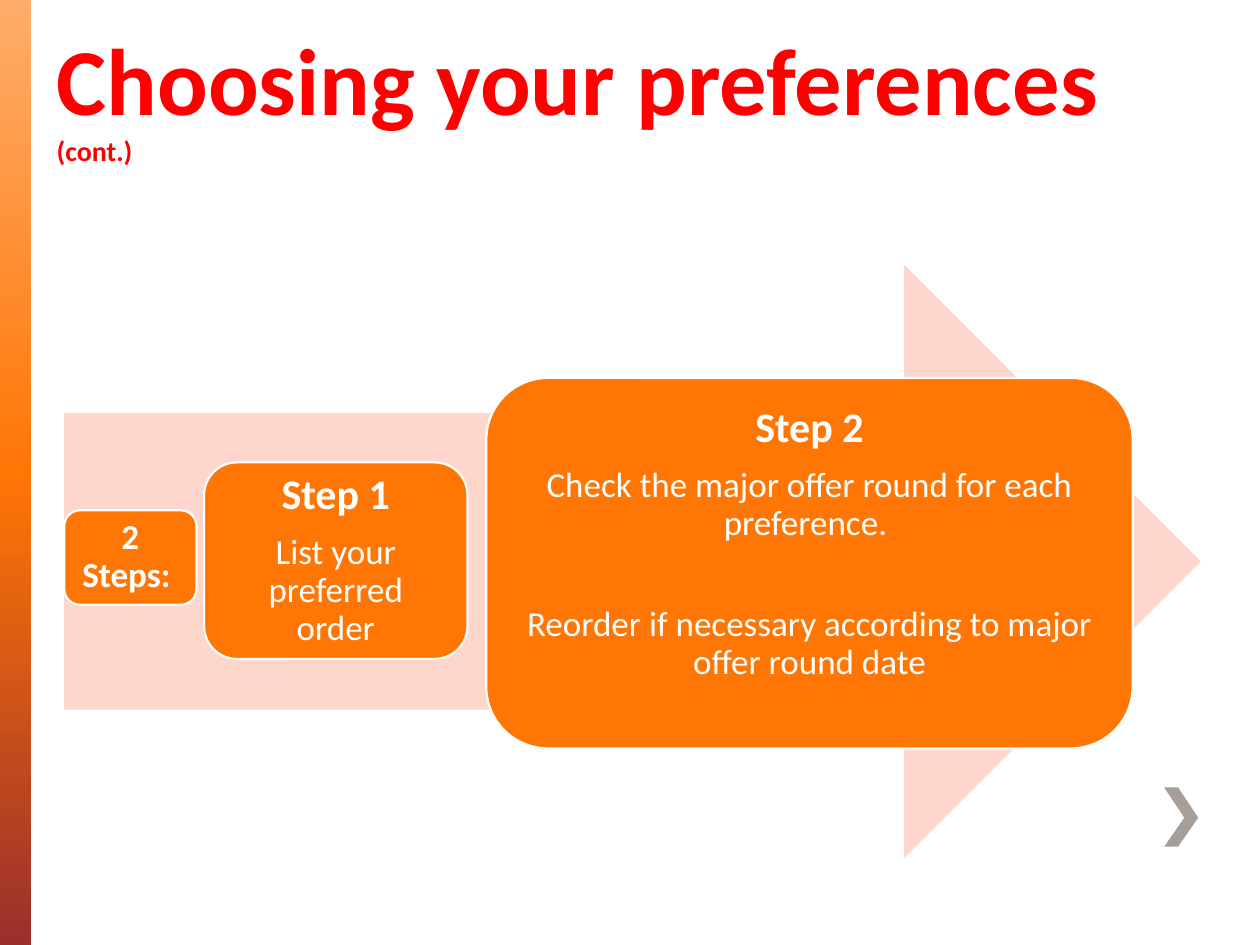
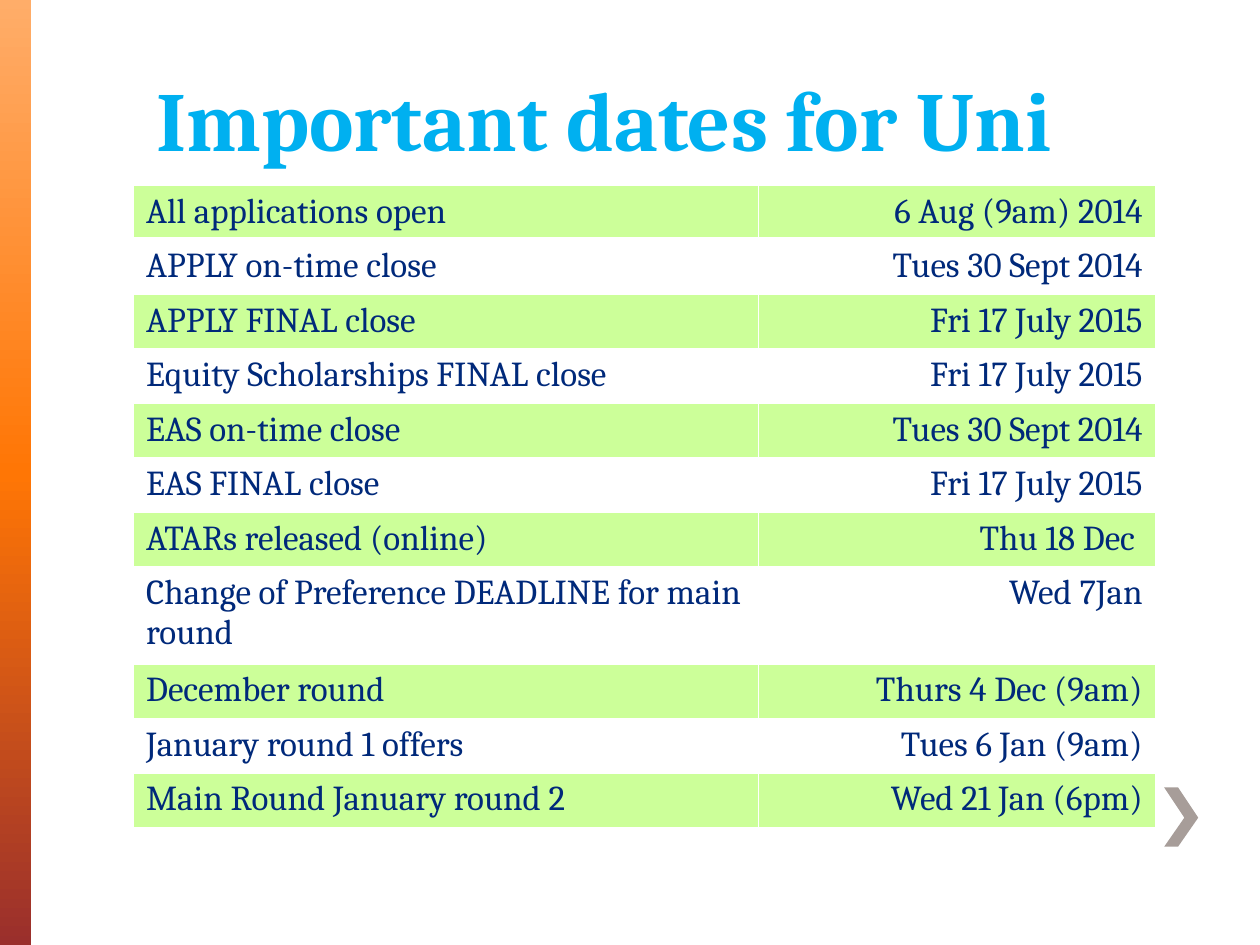
from copy import deepcopy

from lxml.etree import SubElement
from pptx import Presentation
from pptx.dml.color import RGBColor
from pptx.enum.shapes import MSO_SHAPE
from pptx.enum.text import MSO_ANCHOR, MSO_AUTO_SIZE, PP_ALIGN
from pptx.oxml.ns import qn
from pptx.util import Inches, Pt

COLORS = {
    "band_top": "FFAD69",
    "orange": "FF7605",
    "band_bottom": "9A2F2C",
    "chevron": "A79D99",
    "arrow": "FFD6CC",
    "white": "FFFFFF",
    "red": "FF0000",
    "sky": "00B0F0",
    "navy": "00297A",
    "lime": "CCFF99",
}
COLORS = {name: RGBColor.from_string(value) for name, value in COLORS.items()}

presentation = Presentation()
presentation.slide_width = Inches(10)
presentation.slide_height = Inches(7.5)
COLUMN = presentation.slide_width / 100
ROW = presentation.slide_height / 75


def area(left, top, width, height):
    return [round(cells * unit) for cells, unit in
            zip((left, top, width, height), (COLUMN, ROW, COLUMN, ROW))]


def write(paragraph, text, color, **formats):
    run = paragraph.add_run()
    run.text = text
    run.font.color.rgb = COLORS[color]
    for name, value in formats.items():
        setattr(run.font, name, value)


BAND_STOPS = [(0, "band_top"), (0.5, "orange"), (1, "band_bottom")]
CHEVRON_POINTS = [(924, 625), (940, 649), (924, 672), (935, 672), (951, 649)]
TITLE_FORMAT = {
    "word_wrap": True,
    "auto_size": MSO_AUTO_SIZE.NONE,
    "vertical_anchor": MSO_ANCHOR.BOTTOM,
}
TITLES = [
    ((3.5, 1.3, 87.6, 12.5), "Calibri", "red",
     [("Choosing your preferences ", 54), ("(cont.)", 16)]),
    ((11.4, 2.9, 78.8, 11), "Cambria", "sky", [("Important dates for Uni", 48)]),
]

slides = []
for title_area, font_name, color, parts in TITLES:
    slide = presentation.slides.add_slide(presentation.slide_layouts[5])
    slides.append(slide)

    band = slide.shapes.add_shape(MSO_SHAPE.RECTANGLE, *area(0, 0, 2.5, 75))
    band.shadow.inherit = False
    band.line.fill.background()
    band.fill.gradient()
    band.fill.gradient_angle = 270
    stop_list = band.element.find(".//" + qn("a:gsLst"))
    stop_list.append(deepcopy(stop_list[-1]))
    for stop, (position, stop_color) in zip(band.fill.gradient_stops, BAND_STOPS):
        stop.position = position
        stop.color.rgb = COLORS[stop_color]

    builder = slide.shapes.build_freeform(935, 625, scale=Inches(0.01))
    builder.add_line_segments(CHEVRON_POINTS, close=True)
    chevron = builder.convert_to_shape()
    chevron.shadow.inherit = False
    chevron.fill.solid()
    chevron.fill.fore_color.rgb = COLORS["chevron"]
    chevron.line.fill.background()

    title = slide.shapes.title
    title.left, title.top, title.width, title.height = area(*title_area)
    for name, value in TITLE_FORMAT.items():
        setattr(title.text_frame, name, value)
    paragraph = title.text_frame.paragraphs[0]
    paragraph.alignment = PP_ALIGN.LEFT
    for text, size in parts:
        write(paragraph, text, color, name=font_name, size=Pt(size), bold=True)

steps_slide, dates_slide = slides

arrow = steps_slide.shapes.add_shape(MSO_SHAPE.RIGHT_ARROW, *area(5.1, 21, 90.2, 47.1))
arrow.shadow.inherit = False
arrow.fill.solid()
arrow.fill.fore_color.rgb = COLORS["arrow"]
arrow.line.fill.background()

STEPS = [
    ((5.1, 40.5, 10.5, 7.5), 0.8, 0.8, [("2 Steps: ", 20, True, 0)]),
    ((16.2, 36.7, 20.9, 15.6), 1, 1,
     [("Step 1", 24, True, 9), ("List your preferred order", 20, False, 0)]),
    ((38.6, 30, 51.3, 29.4), 1, 4,
     [("Step 2", 24, True, 9),
      ("Check the major offer round for each preference. ", 20, False, 36),
      ("Reorder if necessary according to major offer round date", 20, False, 0)]),
]
for step_area, margin, bottom_margin, lines in STEPS:
    step = steps_slide.shapes.add_shape(MSO_SHAPE.ROUNDED_RECTANGLE, *area(*step_area))
    step.shadow.inherit = False
    step.fill.solid()
    step.fill.fore_color.rgb = COLORS["orange"]
    step.line.color.rgb = COLORS["white"]
    step.line.width = Pt(1.25)
    frame = step.text_frame
    frame.word_wrap = True
    frame.vertical_anchor = MSO_ANCHOR.MIDDLE
    for side in ("left", "right", "top"):
        setattr(frame, f"margin_{side}", round(margin * ROW))
    frame.margin_bottom = round(bottom_margin * ROW)
    for index, (text, size, bold, gap) in enumerate(lines):
        paragraph = frame.add_paragraph() if index else frame.paragraphs[0]
        paragraph.alignment = PP_ALIGN.CENTER
        paragraph.line_spacing = 0.9
        paragraph.space_after = Pt(gap)
        write(paragraph, text, "white", name="Calibri", size=Pt(size), bold=bold)

DATES = [
    ("All applications open", "6 Aug (9am) 2014"),
    ("APPLY on-time close", "Tues 30 Sept 2014"),
    ("APPLY FINAL close", "Fri 17 July 2015"),
    ("Equity Scholarships FINAL close", "Fri 17 July 2015"),
    ("EAS on-time close", "Tues 30 Sept 2014"),
    ("EAS FINAL close", "Fri 17 July 2015"),
    ("ATARs released (online)", "Thu 18 Dec "),
    ("Change of Preference DEADLINE for main round", "Wed 7Jan"),
    ("December round", "Thurs 4 Dec (9am)"),
    ("January round 1 offers", "Tues 6 Jan (9am)"),
    ("Main Round January round 2", "Wed 21 Jan (6pm)"),
]
table = dates_slide.shapes.add_table(len(DATES), 2, *area(10.6, 14.7, 81.1, 51)).table
table.first_row = False
table.horz_banding = False
for column, width in zip(table.columns, (49.6, 31.5)):
    column.width = round(width * COLUMN)

for row_index, entries in enumerate(DATES):
    table.rows[row_index].height = round((7.7 if len(entries[0]) > 40 else 4.33) * ROW)
    for column_index, text in enumerate(entries):
        cell = table.cell(row_index, column_index)
        properties = cell._tc.get_or_add_tcPr()
        for edge in ("L", "R", "T", "B"):
            weight = 3 if row_index == 0 and edge == "B" else 1
            border = SubElement(properties, qn(f"a:ln{edge}"), w=str(Pt(weight)))
            border_fill = SubElement(border, qn("a:solidFill"))
            SubElement(border_fill, qn("a:srgbClr"), val=str(COLORS["white"]))
        cell.fill.solid()
        cell.fill.fore_color.rgb = COLORS["white" if row_index % 2 else "lime"]
        paragraph = cell.text_frame.paragraphs[0]
        paragraph.alignment = PP_ALIGN.RIGHT if column_index else PP_ALIGN.LEFT
        write(paragraph, text, "navy", name="Cambria", size=Pt(20), bold=False)

presentation.save("out.pptx")
